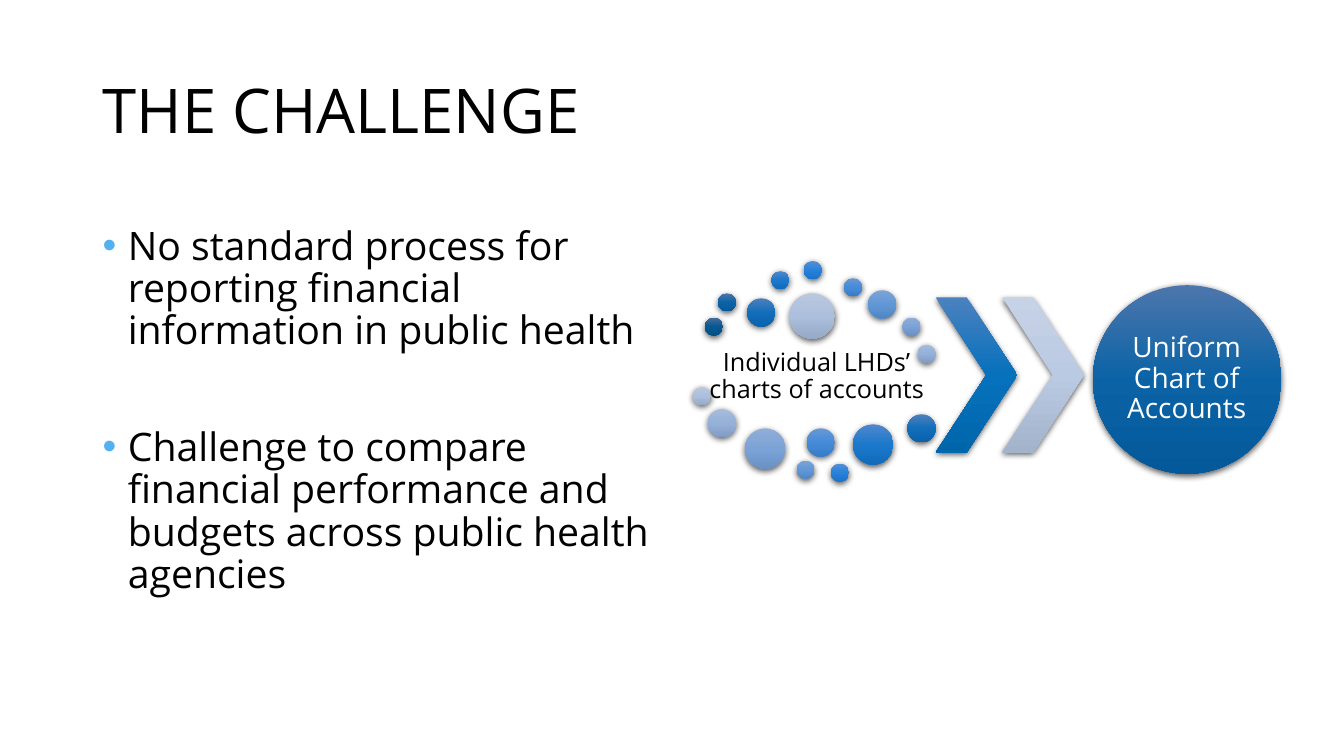
from itertools import chain
from lxml import etree
from pptx import Presentation
from pptx.dml.color import RGBColor
from pptx.enum.shapes import MSO_SHAPE
from pptx.enum.text import MSO_ANCHOR, PP_ALIGN
from pptx.oxml import parse_xml
from pptx.oxml.ns import nsdecls, qn
from pptx.util import Pt

PX = 9144
FONT = "Open Sans"
OVAL, CHEVRON = MSO_SHAPE.OVAL, MSO_SHAPE.CHEVRON
MIDDLE = MSO_ANCHOR.MIDDLE
LEFT, CENTER = PP_ALIGN.LEFT, PP_ALIGN.CENTER
COLORS = {"ink": "000000", "paper": "FFFFFF", "bullet": "54B1F1"}
TONES = [
    ("4B6D9A", "055891", "004F85"),
    ("4C76AC", "0B63A6", "03599A"),
    ("4D7FBD", "126EBA", "0A62AC"),
    ("5087CD", "1B78CB", "116BBC"),
    ("568FD8", "2881DA", "1B73CA"),
    ("6798D6", "468BD7", "367CC7"),
    ("7BA3D7", "6297D6", "5186C4"),
    ("90AED8", "7CA3D7", "6991C4"),
    ("A4BBDB", "95B1D9", "809CC4"),
    ("B9C8DF", "ACBFDC", "96A9C7"),
]
ARROWS = [("4B81BF", "0671BC", "0066AC"), ("C6D2E6", "BBCAE3", "A3B3CC")]
DOTS = [
    (12, 56, 18), (25, 32, 18), (54, 37, 28), (78, 10, 18), (110, 0, 18),
    (150, 17, 18), (174, 29, 28), (208, 56, 18), (223, 83, 18), (96, 32, 45),
    (0, 125, 18), (15, 147, 28), (52, 166, 40), (103, 198, 18),
    (113, 166, 28), (137, 201, 18), (159, 162, 40), (213, 152, 28),
]
POINTS = [
    "No standard process for reporting financial information in public health",
    "Challenge to compare financial performance and budgets across public health agencies",
]


def emu(*sizes):
    """Turn px lengths into EMU."""
    return [size * PX for size in sizes]


def style(para, size, color="ink", align=LEFT):
    """Set the font, spacing and alignment of a paragraph."""
    para.alignment = align
    para.line_spacing = 0.9
    para.font.name = FONT
    para.font.size = Pt(size)
    para.font.color.rgb = RGBColor.from_string(COLORS[color])


def shade(shape, tone):
    """Give a shape a downward gradient and a soft shadow."""
    shape.line.fill.background()
    shape.fill.background()
    stops = "".join(
        f'<a:gs pos="{i * 50000}"><a:srgbClr val="{color}"/></a:gs>'
        for i, color in enumerate(tone))
    props = shape.fill._xPr
    props.replace(props.find(qn("a:noFill")), parse_xml(
        f'<a:gradFill {nsdecls("a")} rotWithShape="1"><a:gsLst>{stops}</a:gsLst>'
        '<a:lin ang="5400000" scaled="0"/></a:gradFill>'))
    shape.shadow.inherit = False
    props.find(qn("a:effectLst")).append(parse_xml(
        f'<a:outerShdw {nsdecls("a")} blurRad="57150" dist="19050" dir="5400000" '
        'algn="ctr" rotWithShape="0"><a:srgbClr val="000000">'
        '<a:alpha val="63000"/></a:srgbClr></a:outerShdw>'))


def label(shapes, box, text, size, color, inset):
    """Add a centred text box."""
    frame = shapes.add_textbox(*emu(*box)).text_frame
    frame.word_wrap = True
    frame.vertical_anchor = MIDDLE
    frame.margin_left = frame.margin_right = inset * PX
    frame.margin_top = frame.margin_bottom = inset * PX
    frame.text = text
    style(frame.paragraphs[0], size, color, CENTER)


def heading(slide, box):
    """Place the slide title."""
    title = slide.shapes.title
    title.left, title.top, title.width, title.height = emu(*box)
    title.text_frame.text = "THE CHALLENGE"
    title.text_frame.vertical_anchor = MIDDLE
    style(title.text_frame.paragraphs[0], 44)


def bullets(slide, box):
    """Place the list of points."""
    frame = slide.shapes.add_textbox(*emu(*box)).text_frame
    frame.word_wrap = True
    frame.vertical_anchor = MIDDLE
    frame.margin_bottom = 38 * PX
    for i, text in enumerate(POINTS):
        para = frame.add_paragraph() if i else frame.paragraphs[0]
        para.text = text
        if i:
            para.space_before = Pt(53)
        props = para._p.get_or_add_pPr()
        props.set("marL", str(25 * PX))
        props.set("indent", str(-25 * PX))
        mark = etree.SubElement(props, qn("a:buClr"))
        etree.SubElement(mark, qn("a:srgbClr"), val=COLORS["bullet"])
        etree.SubElement(props, qn("a:buFont"), typeface="Arial")
        etree.SubElement(props, qn("a:buChar"), char="•")
        style(para, 28)


def diagram(slide, left, top):
    """Draw scattered dots that lead through arrows to one circle."""
    shapes = slide.shapes.add_group_shape().shapes
    label(shapes, (left + 13, top + 78, 220, 73),
          "Individual LHDs’ charts of accounts", 18, "ink", 3)
    for (x, y, size), tone in zip(DOTS, chain(TONES, reversed(TONES))):
        shade(shapes.add_shape(OVAL, *emu(left + x, top + y, size, size)), tone)
    for i, tone in enumerate(ARROWS):
        arrow = shapes.add_shape(
            CHEVRON, *emu(left + 241 + 66 * i, top + 36, 81, 154))
        arrow.adjustments[0] = 0.62
        shade(arrow, tone)
    shade(shapes.add_shape(OVAL, *emu(left + 397, top + 24, 187, 187)), TONES[1])
    label(shapes, (left + 424, top + 51, 132, 132),
          "Uniform Chart of Accounts", 20, "paper", 0)


def main():
    """Build and save the slide."""
    deck = Presentation()
    deck.slide_width, deck.slide_height = emu(1333, 750)
    slide = deck.slides.add_slide(deck.slide_layouts[5])
    heading(slide, (92, 40, 1150, 145))
    bullets(slide, (92, 200, 567, 450))
    diagram(slide, 687, 259)
    deck.save("out.pptx")


if __name__ == "__main__":
    main()
